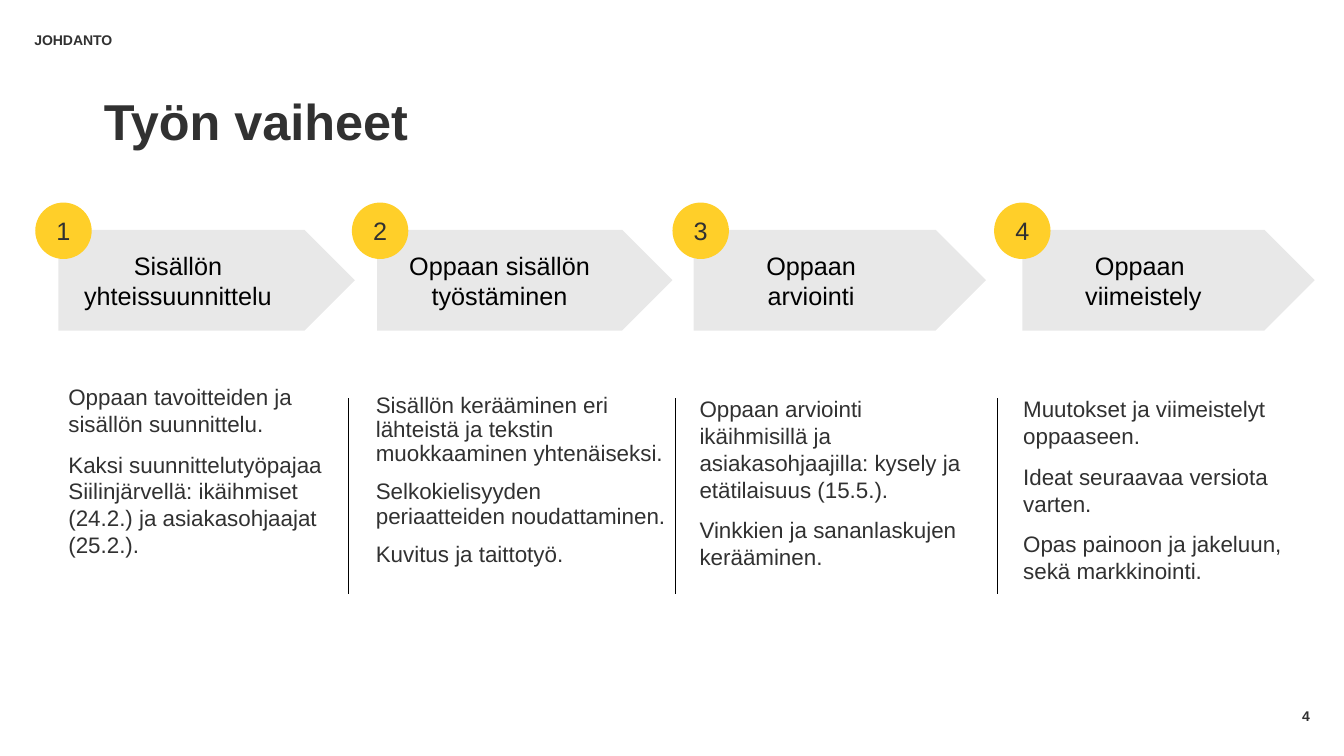
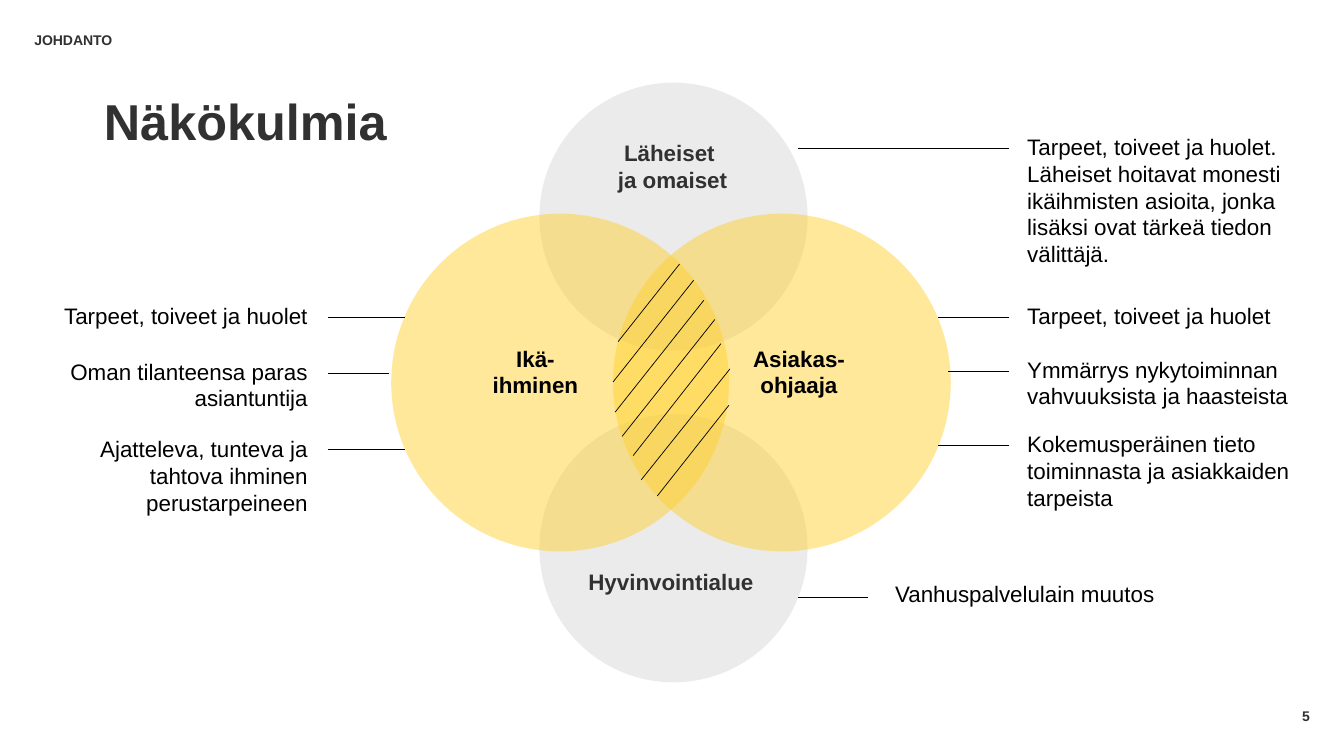
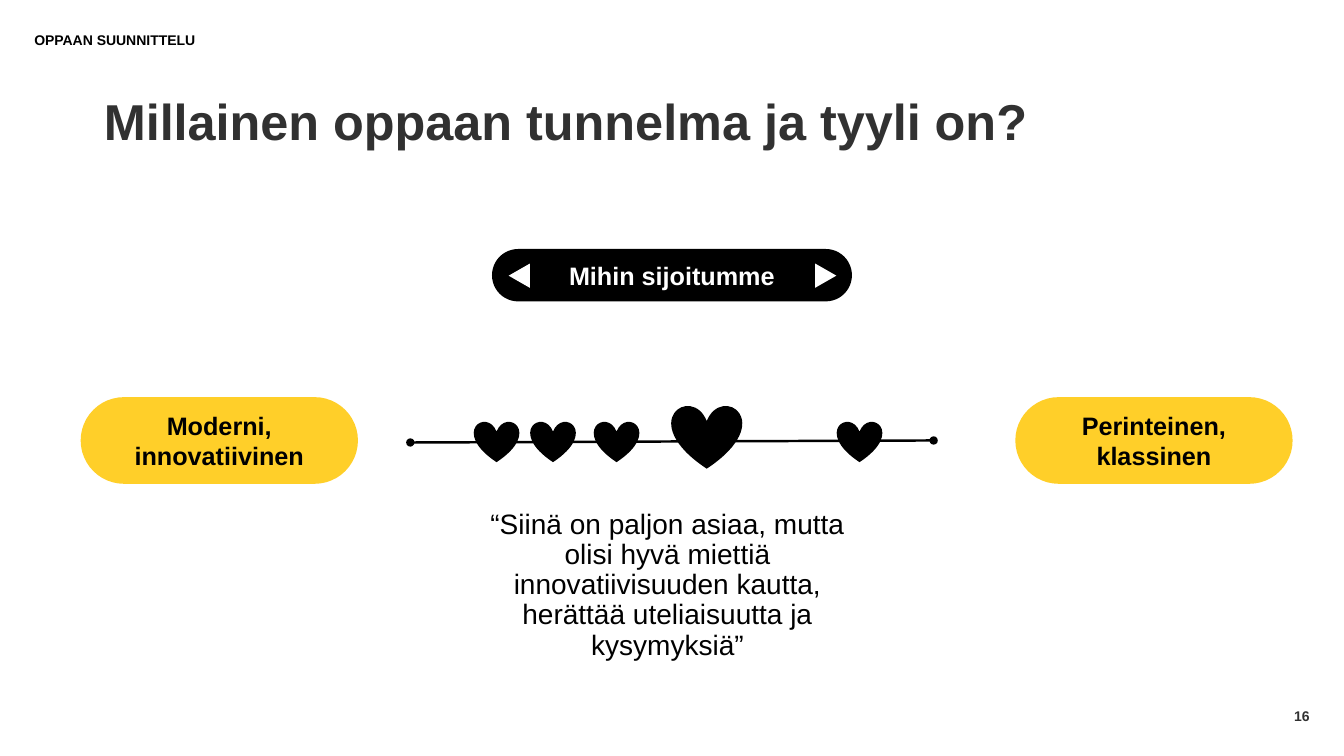
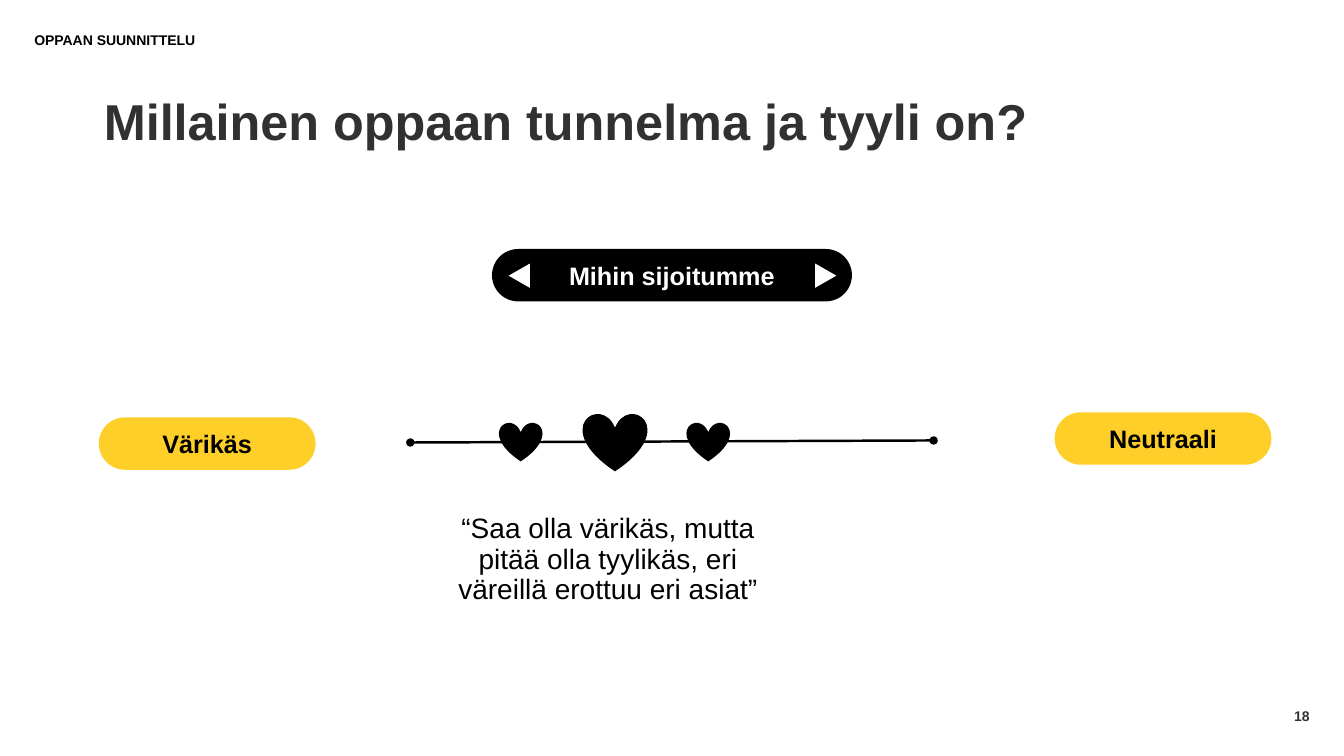
"""Build four slides on the making of a guide: phases, viewpoints and style scales."""
import lxml.etree
import pptx
import pptx.dml.color
import pptx.enum.shapes
import pptx.enum.text
import pptx.oxml.ns
import pptx.util

Inches = pptx.util.Inches
Pt = pptx.util.Pt
SHAPE = pptx.enum.shapes.MSO_SHAPE
ALIGN = pptx.enum.text.PP_ALIGN
ANCHOR = pptx.enum.text.MSO_ANCHOR
qn = pptx.oxml.ns.qn

BLACK = pptx.dml.color.RGBColor(0x00, 0x00, 0x00)
WHITE = pptx.dml.color.RGBColor(0xFF, 0xFF, 0xFF)
INK = pptx.dml.color.RGBColor(0x31, 0x31, 0x31)
YELLOW = pptx.dml.color.RGBColor(0xFF, 0xCF, 0x29)
FONT = "Arial"


def add_block(page, kind, at, paragraphs=(), size=16, color=BLACK, bold=False,
              align=ALIGN.LEFT, anchor=ANCHOR.TOP, inset=None, spacing=None,
              fill=None, opacity=None):
    """Add a shape, or a text box when kind is None, with its paragraphs."""
    frame = [Inches(length) for length in at]
    if kind is None:
        box = page.shapes.add_textbox(*frame)
    else:
        box = page.shapes.add_shape(kind, *frame)
        box.shadow.inherit = False
        box.line.fill.background()
        box.fill.solid()
        box.fill.fore_color.rgb = fill
        if opacity is not None:
            tint = box.element.spPr.find(qn("a:solidFill"))[0]
            lxml.etree.SubElement(tint, qn("a:alpha"), val=str(opacity * 1000))
    text = box.text_frame
    text.word_wrap = True
    text.vertical_anchor = anchor
    if inset is not None:
        text.margin_left = text.margin_right = Inches(inset)
        text.margin_top = text.margin_bottom = Inches(inset)
    for index, words in enumerate(paragraphs):
        para = text.add_paragraph() if index else text.paragraphs[0]
        para.alignment = align
        if spacing:
            para.line_spacing = spacing
        if index:
            para.space_before = Pt(10)
        for row, part in enumerate(words.split("\n")):
            if row:
                para.add_line_break()
            span = para.add_run()
            span.text = part
            span.font.name = FONT
            span.font.size = Pt(size)
            span.font.bold = bold
            span.font.color.rgb = color
    return box


def add_line(page, start, end, width=0.5):
    """Add a straight black line without shadow."""
    line = page.shapes.add_connector(
        pptx.enum.shapes.MSO_CONNECTOR.STRAIGHT,
        *[Inches(length) for length in (*start, *end)])
    line.line.color.rgb = BLACK
    line.line.width = Pt(width)
    lxml.etree.SubElement(line.element.spPr, qn("a:effectLst"))
    return line


deck = pptx.Presentation()
deck.slide_width = Inches(13.33)
deck.slide_height = Inches(7.5)

STYLE_TITLE = "Millainen oppaan tunnelma ja tyyli on?"
pages = []
for section, section_color, title, number in [
    ("JOHDANTO", INK, "Työn vaiheet", "4"),
    ("JOHDANTO", INK, "Näkökulmia", "5"),
    ("OPPAAN SUUNNITTELU", BLACK, STYLE_TITLE, "16"),
    ("OPPAAN SUUNNITTELU", BLACK, STYLE_TITLE, "18"),
]:
    page = deck.slides.add_slide(deck.slide_layouts[6])
    add_block(page, None, (1.03, 0.94, 11.28, 1.35), [title], 36, INK, True,
              inset=0, spacing=0.95)
    add_block(page, None, (0.34, 0.2, 5.64, 0.4), [section], 10, section_color, True,
              anchor=ANCHOR.MIDDLE, inset=0)
    add_block(page, None, (9.99, 6.9, 3, 0.4), [number], 10, INK, True,
              ALIGN.RIGHT, ANCHOR.MIDDLE, inset=0)
    pages.append(page)
phases_page, views_page, *style_pages = pages

phases = [
    ("Sisällön \nyhteissuunnittelu ", 0.58, 2.94, 0.35, (0.58, 3.75, 2.72, 3.48), None,
     ["Oppaan tavoitteiden ja sisällön suunnittelu.",
      "Kaksi suunnittelutyöpajaa Siilinjärvellä: ikäihmiset (24.2.) ja "
      "asiakasohjaajat (25.2.)."]),
    ("Oppaan sisällön työstäminen", 3.74, 2.93, 3.49, (3.63, 3.86, 3.1, 2.49), 0.9,
     ["Sisällön kerääminen eri lähteistä ja tekstin muokkaaminen yhtenäiseksi.",
      "Selkokielisyyden periaatteiden noudattaminen.",
      "Kuvitus ja taittotyö."]),
    ("Oppaan \narviointi ", 6.88, 2.9, 6.67, (6.84, 3.87, 2.9, 3.48), None,
     ["Oppaan arviointi ikäihmisillä ja asiakasohjaajilla: kysely ja "
      "etätilaisuus (15.5.).",
      "Vinkkien ja sananlaskujen kerääminen."]),
    ("Oppaan \nviimeistely", 10.14, 2.9, 9.86, (10.05, 3.87, 2.97, 3.48), None,
     ["Muutokset ja viimeistelyt oppaaseen.",
      "Ideat seuraavaa versiota varten.",
      "Opas painoon ja jakeluun, sekä markkinointi."]),
]
for number, (heading, left, width, badge_left, at, spacing, details) in enumerate(phases, 1):
    arrow = add_block(phases_page, SHAPE.RIGHT_ARROW, (left, 2.28, width, 1.0), [heading],
                      18, align=ALIGN.CENTER, anchor=ANCHOR.MIDDLE, fill=BLACK, opacity=9)
    arrow.adjustments[0] = 1
    arrow.adjustments[1] = 0.5
    add_block(phases_page, SHAPE.OVAL, (badge_left, 2.01, 0.56, 0.56), [str(number)],
              18, INK, align=ALIGN.CENTER, anchor=ANCHOR.MIDDLE, fill=YELLOW)
    add_block(phases_page, None, at, details, color=INK, spacing=spacing)
for x in (3.46, 6.7, 9.89):
    add_line(phases_page, (x, 3.95), (x, 5.89))

for left, top, diameter, fill, opacity in [
    (5.35, 0.82, 2.66, BLACK, 8),
    (5.35, 4.11, 2.66, BLACK, 8),
    (3.88, 2.12, 3.35, YELLOW, 47),
    (6.08, 2.12, 3.35, YELLOW, 47),
]:
    add_block(views_page, SHAPE.OVAL, (left, top, diameter, diameter),
              fill=fill, opacity=opacity)

for at, name, color in [
    ((5.96, 1.33, 1.42, 0.64), "Läheiset \nja omaiset", INK),
    ((4.6, 3.37, 1.42, 0.64), "Ikä-ihminen", BLACK),
    ((6.96, 3.37, 1.93, 0.64), "Asiakas-\nohjaaja", BLACK),
    ((5.69, 5.59, 1.93, 0.37), "Hyvinvointialue", INK),
]:
    add_block(views_page, None, at, [name], color=color, bold=True, align=ALIGN.CENTER)

for start, end in [
    ((6.74, 2.62), (6.13, 3.39)),
    ((6.88, 2.78), (6.08, 3.79)),
    ((6.98, 2.98), (6.1, 4.09)),
    ((7.09, 3.17), (6.17, 4.33)),
    ((7.15, 3.41), (6.28, 4.52)),
    ((7.24, 3.66), (6.36, 4.76)),
    ((7.23, 4.02), (6.52, 4.92)),
]:
    add_line(views_page, start, end)

NEEDS = "Tarpeet, toiveet ja huolet"
for left, top, width, height, align, line_from, line_to, line_y, note in [
    (0.15, 2.95, 3, 0.37, ALIGN.RIGHT, 3.25, 4.02, 3.15, NEEDS),
    (0.15, 3.5, 3, 0.64, ALIGN.RIGHT, 3.25, 3.86, 3.7,
     "Oman tilanteensa paras asiantuntija"),
    (0.5, 4.27, 2.65, 0.91, ALIGN.RIGHT, 3.25, 4.02, 4.46,
     "Ajatteleva, tunteva ja tahtova ihminen perustarpeineen"),
    (10.09, 1.27, 3, 1.45, ALIGN.LEFT, 10.01, 7.91, 1.47,
     NEEDS + ". Läheiset hoitavat monesti ikäihmisten asioita, jonka lisäksi ovat "
     "tärkeä tiedon välittäjä."),
    (10.09, 2.95, 3, 0.37, ALIGN.LEFT, 10.01, 9.3, 3.15, NEEDS),
    (10.09, 3.48, 3, 0.64, ALIGN.LEFT, 10.01, 9.4, 3.68,
     "Ymmärrys nykytoiminnan vahvuuksista ja haasteista"),
    (10.09, 4.22, 3, 0.91, ALIGN.LEFT, 10.01, 9.3, 4.42,
     "Kokemusperäinen tieto toiminnasta ja asiakkaiden tarpeista"),
    (8.78, 5.71, 3, 0.37, ALIGN.LEFT, 8.61, 7.91, 5.93, "Vanhuspalvelulain muutos"),
]:
    add_block(views_page, None, (left, top, width, height), [note], align=align)
    add_line(views_page, (line_from, line_y), (line_to, line_y))

scales = [
    ([((0.8, 3.94, 2.75, 0.86), "Moderni, innovatiivinen"),
      ((10.07, 3.94, 2.75, 0.86), "Perinteinen, klassinen")],
     [(4.7, 4.18, 0.45), (5.26, 4.18, 0.45), (5.89, 4.18, 0.45), (6.66, 4.02, 0.7),
      (8.3, 4.18, 0.45)],
     (4.62, 4.78, 4, 2.06),
     "“Siinä on paljon asiaa, mutta olisi hyvä miettiä innovatiivisuuden kautta, "
     "herättää uteliaisuutta ja kysymyksiä”"),
    ([((0.98, 4.14, 2.15, 0.52), "Värikäs"),
      ((10.46, 4.09, 2.15, 0.52), "Neutraali")],
     [(4.95, 4.19, 0.43), (5.78, 4.1, 0.64), (6.81, 4.19, 0.43)],
     (4.34, 4.57, 3.38, 1.97),
     "“Saa olla värikäs, mutta pitää olla tyylikäs, eri väreillä erottuu eri asiat”"),
]
for page, (ends, hearts, quote_at, quote) in zip(style_pages, scales):
    question = ((4.88, 2.47, 3.57, 0.52), "Mihin sijoitumme")
    for at, label in [question, *ends]:
        asking = label == question[1]
        pill = add_block(page, SHAPE.ROUNDED_RECTANGLE, at, [label], 18,
                         WHITE if asking else BLACK, True, ALIGN.CENTER, ANCHOR.MIDDLE,
                         fill=BLACK if asking else YELLOW)
        pill.adjustments[0] = 0.5
    for left, rotation in ((5.03, 270), (8.07, 90)):
        pointer = add_block(page, SHAPE.ISOSCELES_TRIANGLE, (left, 2.63, 0.24, 0.21),
                            fill=WHITE)
        pointer.rotation = rotation
    scale = add_line(page, (4.07, 4.39), (9.26, 4.37), 1.75)
    outline = scale.element.spPr.find(qn("a:ln"))
    for tag in ("a:headEnd", "a:tailEnd"):
        lxml.etree.SubElement(outline, qn(tag), type="oval")
    for left, top, width in hearts:
        add_block(page, SHAPE.HEART, (left, top, width, 0.9 * width), fill=BLACK)
    add_block(page, None, quote_at, [quote], 20, align=ALIGN.CENTER,
              anchor=ANCHOR.MIDDLE, spacing=0.9)

deck.save("out.pptx")
